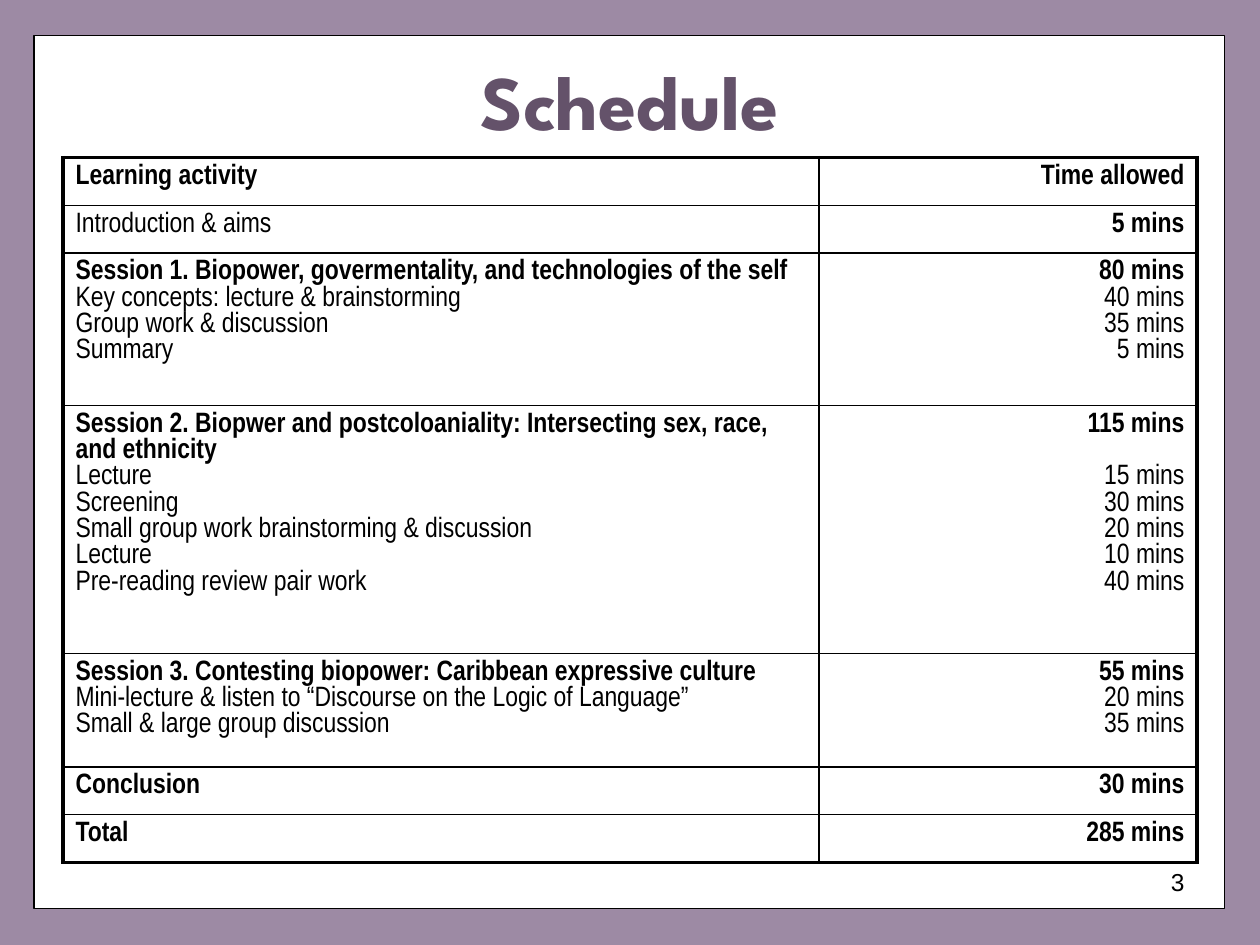
from lxml import etree
from pptx import Presentation
from pptx import util as u
from pptx.dml.color import RGBColor
from pptx.enum import shapes, text
from pptx.oxml import ns

COLORS = {"backdrop": "9D8AA4", "page": "FFFFFF", "ink": "000000", "heading": "64526A"}
BODY_FONT = "Arial Narrow"
SCHEDULE = [
    (0.38, [("Learning activity", "Time allowed")]),
    (0.38, [("Introduction & aims", "5 mins")]),
    (1.21, [
        ("Session 1. Biopower, govermentality, and technologies of the self", "80 mins"),
        ("Key concepts: lecture & brainstorming", "40 mins"),
        ("Group work & discussion", "35 mins"),
        ("Summary", "5 mins"),
    ]),
    (1.56, [
        ("Session 2. Biopwer and postcoloaniality: Intersecting sex, race, and ethnicity", "115 mins"),
        ("Lecture", "15 mins"),
        ("Screening", "30 mins"),
        ("Small group work brainstorming & discussion", "20 mins"),
        ("Lecture", "10 mins"),
        ("Pre-reading review pair work", "40 mins"),
    ]),
    (0.84, [
        ("Session 3. Contesting biopower: Caribbean expressive culture", "55 mins"),
        ("Mini-lecture & listen to “Discourse on the Logic of Language”", "20 mins"),
        ("Small & large group discussion", "35 mins"),
    ]),
    (0.38, [("Conclusion", "30 mins")]),
    (0.38, [("Total", "285 mins")]),
]
WRAPPED_SESSION, LINE_HEIGHT = 3, 15


def style(paragraph, size, bold, font=BODY_FONT, color="ink"):
    paragraph.font.name = font
    paragraph.font.size = u.Pt(size)
    paragraph.font.bold = bold
    paragraph.font.color.rgb = RGBColor.from_string(COLORS[color])


def add_border(cell, side, points):
    line = etree.SubElement(cell._tc.get_or_add_tcPr(), ns.qn(f"a:ln{side}"), w=str(u.Pt(points)))
    fill = etree.SubElement(line, ns.qn("a:solidFill"))
    etree.SubElement(fill, ns.qn("a:srgbClr"), val=COLORS["ink"])


deck = Presentation()
deck.slide_width, deck.slide_height = u.Inches(10), u.Inches(7.5)
slide = deck.slides.add_slide(deck.slide_layouts[5])
slide.background.fill.solid()
slide.background.fill.fore_color.rgb = RGBColor.from_string(COLORS["backdrop"])

heading = slide.shapes.title
heading.left, heading.top = u.Inches(0.5), u.Inches(0.17)
heading.width, heading.height = u.Inches(9), u.Inches(1.25)
heading.text_frame.text = "Schedule"
heading.text_frame.vertical_anchor = text.MSO_ANCHOR.MIDDLE
heading.text_frame.paragraphs[0].alignment = text.PP_ALIGN.CENTER
style(heading.text_frame.paragraphs[0], 44, True, "League Spartan", "heading")

page = slide.shapes.add_shape(
    shapes.MSO_SHAPE.RECTANGLE, u.Inches(0.27), u.Inches(0.28), u.Inches(9.45), u.Inches(6.93))
page.shadow.inherit = False
page.fill.solid()
page.fill.fore_color.rgb = RGBColor.from_string(COLORS["page"])
page.line.color.rgb = RGBColor.from_string(COLORS["ink"])
page.line.width = u.Pt(0.75)
heading.element.addprevious(page.element)

page_number = slide.shapes.add_textbox(u.Inches(7.17), u.Inches(6.83), u.Inches(2.33), u.Inches(0.52))
page_number.text_frame.word_wrap = True
page_number.text_frame.text = "3"
page_number.text_frame.paragraphs[0].alignment = text.PP_ALIGN.RIGHT
style(page_number.text_frame.paragraphs[0], 14, False, "Arial")

total_height = sum(height for height, _ in SCHEDULE)
schedule = slide.shapes.add_table(
    len(SCHEDULE), 2, u.Inches(0.5), u.Inches(1.25), u.Inches(9), u.Inches(total_height)).table
schedule.first_row = schedule.horz_banding = False
schedule.columns[0].width, schedule.columns[1].width = u.Inches(6), u.Inches(3)

last = len(SCHEDULE) - 1
for row, (height, entries) in enumerate(SCHEDULE):
    schedule.rows[row].height = u.Inches(height)
    for column, lines in enumerate(zip(*entries)):
        cell = schedule.cell(row, column)
        outer_sides = {"L": column == 0, "R": column == 1, "T": row == 0, "B": row == last}
        for side, outer in outer_sides.items():
            add_border(cell, side, 2.25 if outer else 1)
        cell.fill.background()
        cell.text_frame.text = "\n".join(lines)
        for index, paragraph in enumerate(cell.text_frame.paragraphs):
            introduction = row == 1 and column == 0
            style(paragraph, 16, index == 0 and not introduction)
            paragraph.line_spacing = 1.0
            paragraph.alignment = text.PP_ALIGN.RIGHT if column else text.PP_ALIGN.LEFT
            if row == WRAPPED_SESSION and column == 1 and index == 1:
                paragraph.space_before = u.Pt(LINE_HEIGHT)

deck.save("out.pptx")
